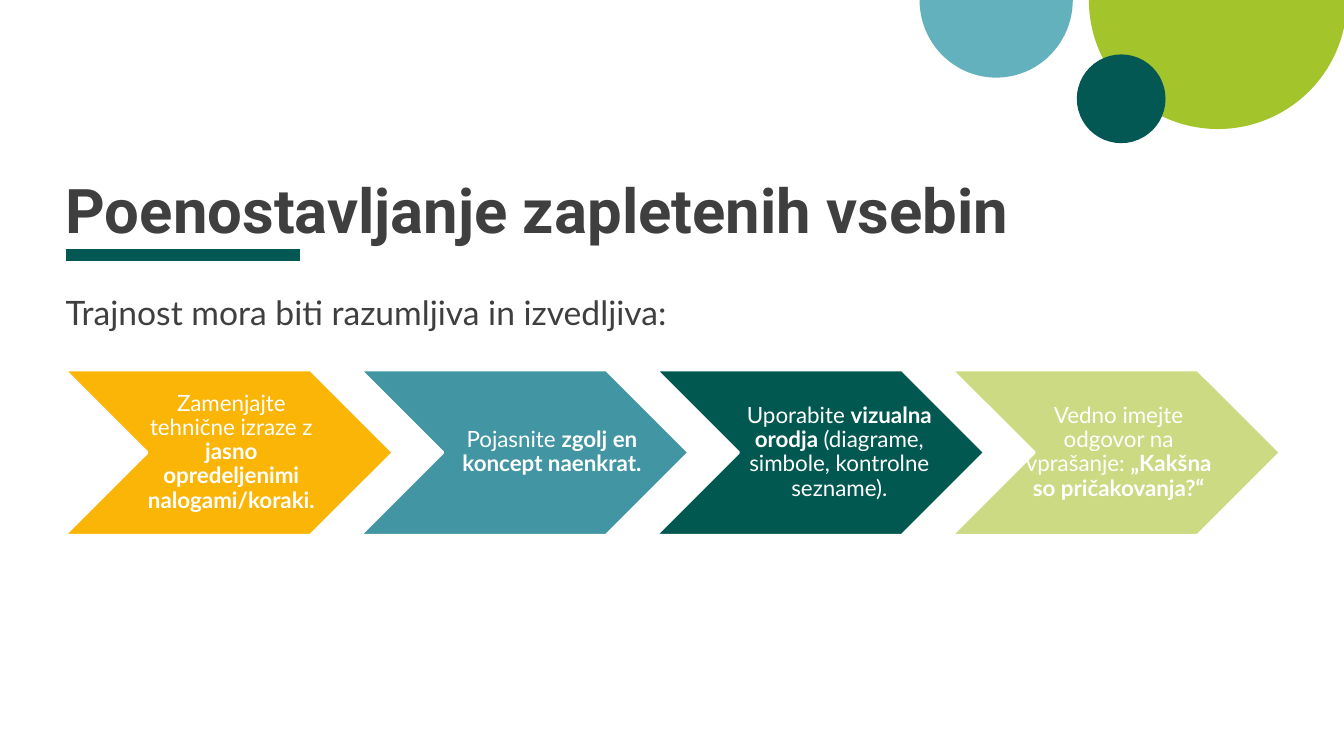
from lxml import etree
from pptx import Presentation
from pptx.dml.color import RGBColor
from pptx.enum.shapes import MSO_CONNECTOR, MSO_SHAPE
from pptx.enum.text import MSO_ANCHOR, MSO_AUTO_SIZE, PP_ALIGN
from pptx.oxml.ns import qn
from pptx.util import Inches, Pt

STRAIGHT = MSO_CONNECTOR.STRAIGHT
PIE, OVAL, CHEVRON = MSO_SHAPE.PIE, MSO_SHAPE.OVAL, MSO_SHAPE.CHEVRON
TOP, MIDDLE, BOTTOM = MSO_ANCHOR.TOP, MSO_ANCHOR.MIDDLE, MSO_ANCHOR.BOTTOM
LEFT, CENTER = PP_ALIGN.LEFT, PP_ALIGN.CENTER
NO_AUTOFIT = MSO_AUTO_SIZE.NONE

WHITE = RGBColor(0xFF, 0xFF, 0xFF)
CHARCOAL = RGBColor(0x3F, 0x3F, 0x3F)
PINE = RGBColor(0x03, 0x58, 0x54)
LIME = RGBColor(0xA3, 0xC4, 0x2A)
SKY = RGBColor(0x64, 0xB1, 0xBE)
AMBER = RGBColor(0xFA, 0xB5, 0x06)
TEAL = RGBColor(0x42, 0x95, 0xA2)
FOREST = RGBColor(0x00, 0x58, 0x51)
PALE_LIME = RGBColor(0xCB, 0xDA, 0x83)

MARGIN, CONTENT_WIDTH = 0.65, 12.09
STEP_LEFT, STEP_TOP, STEP_PITCH = 0.64, 3.67, 2.933
STEP_WIDTH, STEP_HEIGHT, LABEL_WIDTH = 3.26, 1.64, 1.96
HALF_TURN = 108

STEPS = [
    (AMBER, 1.29, [("Zamenjajte tehnične izraze z ", False),
                   ("jasno opredeljenimi nalogami/koraki.", True)]),
    (TEAL, 4.47, [("Pojasnite ", False), ("zgolj en koncept naenkrat.", True)]),
    (FOREST, 7.32, [("Uporabite ", False), ("vizualna orodja ", True),
                    ("(diagrame, simbole, kontrolne sezname).", False)]),
    (PALE_LIME, 10.09, [("Vedno imejte odgovor na vprašanje: ", False),
                        ("„Kakšna so pričakovanja?“", True)]),
]


def place(item, left, top, width, height):
    """Move and size a placeholder."""
    item.left, item.top = Inches(left), Inches(top)
    item.width, item.height = Inches(width), Inches(height)


def write(holder, parts, *, size, color=CHARCOAL, font="Lato", align=LEFT,
          anchor=TOP, spacing=1.0, insets=(0, 0, 0, 0)):
    """Fill a text holder with one paragraph of (text, bold) parts."""
    frame = holder.text_frame
    frame.word_wrap = True
    frame.auto_size = NO_AUTOFIT
    frame.vertical_anchor = anchor
    (frame.margin_left, frame.margin_top,
     frame.margin_right, frame.margin_bottom) = map(Inches, insets)
    paragraph = frame.paragraphs[0]
    paragraph.alignment = align
    paragraph.line_spacing = spacing
    paragraph.space_before = Pt(0)
    for text, bold in parts:
        run = paragraph.add_run()
        run.text = text
        run.font.name = font
        run.font.size = Pt(size)
        run.font.bold = bold
        run.font.color.rgb = color


def remove_bullet(paragraph):
    """Turn off the bullet and hanging indent of a paragraph."""
    properties = paragraph._p.get_or_add_pPr()
    properties.set("marL", "0")
    properties.set("indent", "0")
    etree.SubElement(properties, qn("a:buNone"))


def add_filled(slide, kind, left, top, width, height, color):
    """Add a flat preset shape without an outline."""
    shape = slide.shapes.add_shape(
        kind, Inches(left), Inches(top), Inches(width), Inches(height))
    shape.shadow.inherit = False
    shape.fill.solid()
    shape.fill.fore_color.rgb = color
    shape.line.fill.background()
    return shape


def add_half_disc(slide, left, top, width, height, color):
    """Add the lower half of a disc hanging from the slide's top edge."""
    disc = add_filled(slide, PIE, left, top, width, height, color)
    disc.adjustments[0] = 0
    disc.adjustments[1] = HALF_TURN


def add_rule(slide, left, right, y):
    """Add the thick rule under the title."""
    rule = slide.shapes.add_connector(
        STRAIGHT, Inches(left), Inches(y), Inches(right), Inches(y))
    rule.line.color.rgb = PINE
    rule.line.width = Pt(8)
    etree.SubElement(rule._element.spPr, qn("a:effectLst"))


def add_step(slide, index, color, label_left, parts):
    """Add one chevron of the process and its label."""
    chevron = add_filled(slide, CHEVRON, STEP_LEFT + index * STEP_PITCH,
                         STEP_TOP, STEP_WIDTH, STEP_HEIGHT, color)
    chevron.line.color.rgb = WHITE
    chevron.line.width = Pt(2)
    label = slide.shapes.add_textbox(
        Inches(label_left), Inches(STEP_TOP), Inches(LABEL_WIDTH), Inches(STEP_HEIGHT))
    write(label, parts, size=16, color=WHITE, align=CENTER, anchor=MIDDLE,
          spacing=0.9, insets=(0.08, 0.03, 0.03, 0.03))


def main():
    """Build the slide and save it."""
    deck = Presentation()
    deck.slide_width, deck.slide_height = Inches(13.33), Inches(7.5)
    slide = deck.slides.add_slide(deck.slide_layouts[1])
    slide.background.fill.solid()
    slide.background.fill.fore_color.rgb = WHITE

    add_rule(slide, MARGIN, 2.98, 2.53)
    add_half_disc(slide, 10.8, -1.28, 2.56, 2.56, LIME)
    add_half_disc(slide, 9.12, -0.77, 1.52, 1.54, SKY)
    add_filled(slide, OVAL, 10.68, 0.54, 0.88, 0.88, PINE)

    title = slide.shapes.title
    place(title, MARGIN, 1.84, CONTENT_WIDTH, 0.59)
    write(title, [("Poenostavljanje zapletenih vsebin", True)], size=44,
          font="Roboto", anchor=BOTTOM, spacing=0.8)

    intro = slide.placeholders[1]
    place(intro, MARGIN, 2.9, CONTENT_WIDTH, 0.34)
    remove_bullet(intro.text_frame.paragraphs[0])
    write(intro, [("Trajnost mora biti razumljiva in izvedljiva:", False)], size=24)

    for index, (color, label_left, parts) in enumerate(STEPS):
        add_step(slide, index, color, label_left, parts)

    deck.save("out.pptx")


if __name__ == "__main__":
    main()
